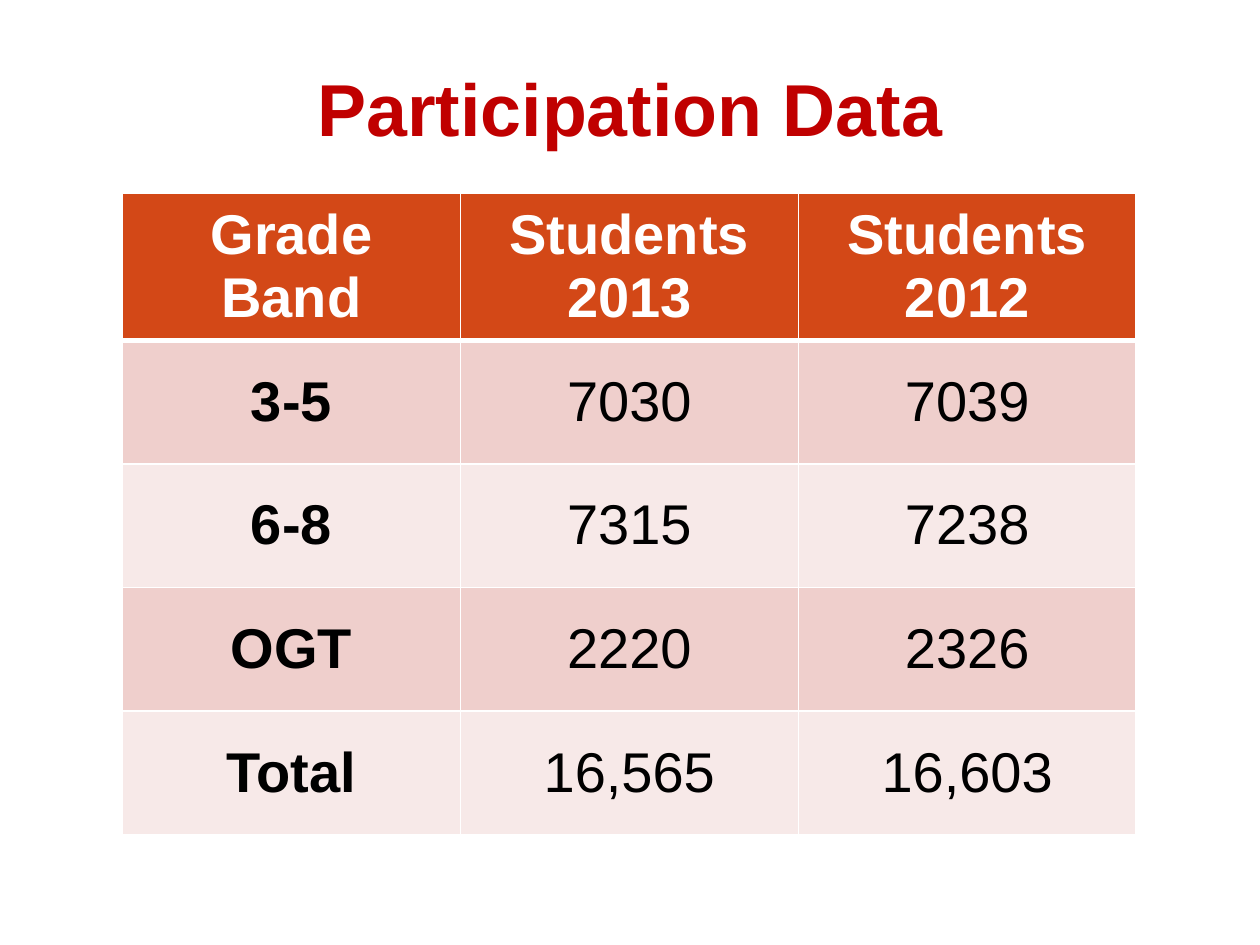
from dataclasses import dataclass

from lxml.etree import SubElement
from pptx import Presentation
from pptx.dml.color import RGBColor as Color
from pptx.enum.text import MSO_ANCHOR as Anchor, PP_ALIGN as Align
from pptx.oxml.ns import qn
from pptx.util import Pt


@dataclass(frozen=True)
class Theme:
    font: str = "Arial"
    title_size: float = 42
    table_size: float = 32
    title: str = "C00000"
    header: str = "D34817"
    header_text: str = "FFFFFF"
    body_text: str = "000000"
    bands: tuple[str, str] = ("EFCFCC", "F7E9E8")
    rule: str = "FFFFFF"
    thin: float = 1
    thick: float = 3


@dataclass(frozen=True)
class GradeBand:
    name: str
    students_2013: str
    students_2012: str


THEME = Theme()
HEADINGS = GradeBand("Grade Band", "Students 2013", "Students 2012")
GRADE_BANDS = [
    GradeBand("3-5", "7030", "7039"),
    GradeBand("6-8", "7315", "7238"),
    GradeBand("OGT", "2220", "2326"),
    GradeBand("Total", "16,565", "16,603"),
]
LEFT, TOP = 70, 110.4
COLUMN_WIDTH = 193.1
HEADER_HEIGHT, BODY_HEIGHT = 81, 70.6


def write(para, text: str, size: float, color: str, bold: bool) -> None:
    para.text = text
    para.alignment = Align.CENTER
    font = para.font
    font.name, font.size, font.bold = THEME.font, Pt(size), bold
    font.color.rgb = Color.from_string(color)


def add_borders(cell, top: float, bottom: float) -> None:
    """Rule all four sides; call before filling, as the schema puts lines first."""
    properties = cell._tc.get_or_add_tcPr()
    widths = {"a:lnL": THEME.thin, "a:lnR": THEME.thin, "a:lnT": top, "a:lnB": bottom}
    for tag, width in widths.items():
        line = SubElement(properties, qn(tag), w=str(Pt(width)))
        fill = SubElement(line, qn("a:solidFill"))
        SubElement(fill, qn("a:srgbClr"), val=THEME.rule)


def add_title(page, text: str) -> None:
    box = page.shapes.add_textbox(Pt(36), Pt(36), Pt(648), Pt(51))
    frame = box.text_frame
    frame.word_wrap = True
    frame.margin_left = frame.margin_right = frame.margin_top = frame.margin_bottom = 0
    write(frame.paragraphs[0], text, THEME.title_size, THEME.title, True)


def fill_row(table, index: int, band: GradeBand) -> None:
    is_header = index == 0
    table.rows[index].height = Pt(HEADER_HEIGHT if is_header else BODY_HEIGHT)
    background = THEME.header if is_header else THEME.bands[(index - 1) % 2]
    color = THEME.header_text if is_header else THEME.body_text
    texts = (band.name, band.students_2013, band.students_2012)
    for column, text in enumerate(texts):
        cell = table.cell(index, column)
        add_borders(
            cell,
            top=THEME.thick if index == 1 else THEME.thin,
            bottom=THEME.thick if is_header else THEME.thin,
        )
        cell.fill.solid()
        cell.fill.fore_color.rgb = Color.from_string(background)
        cell.vertical_anchor = Anchor.MIDDLE
        bold = is_header or column == 0
        write(cell.text_frame.paragraphs[0], text, THEME.table_size, color, bold)


def add_participation_table(page) -> None:
    rows = [HEADINGS, *GRADE_BANDS]
    height = HEADER_HEIGHT + BODY_HEIGHT * len(GRADE_BANDS)
    table = page.shapes.add_table(
        len(rows), 3, Pt(LEFT), Pt(TOP), Pt(COLUMN_WIDTH * 3), Pt(height)
    ).table
    for column in table.columns:
        column.width = Pt(COLUMN_WIDTH)
    for index, band in enumerate(rows):
        fill_row(table, index, band)


def main() -> None:
    deck = Presentation()
    deck.slide_width, deck.slide_height = Pt(720), Pt(540)
    page = deck.slides.add_slide(deck.slide_layouts[6])
    add_title(page, "Participation Data")
    add_participation_table(page)
    deck.save("out.pptx")


if __name__ == "__main__":
    main()
